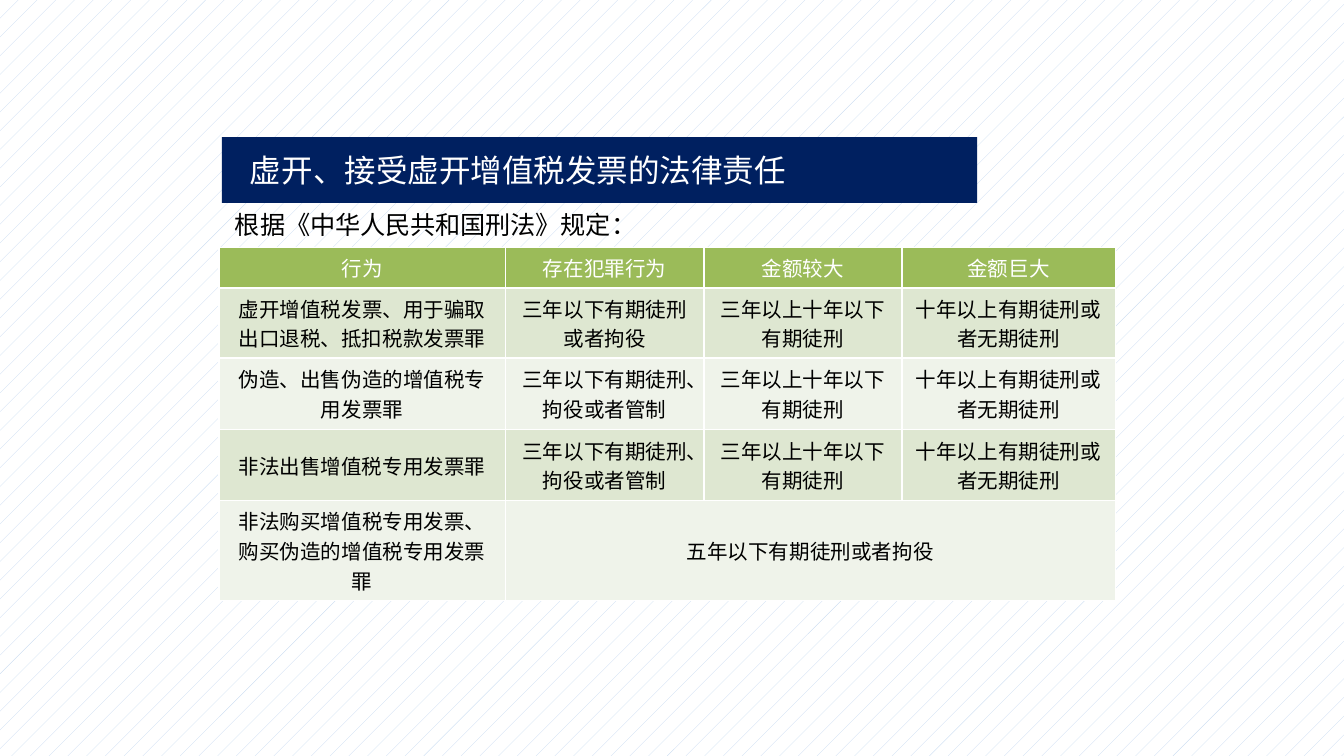
"""Build a slide on the legal liability for false VAT invoices."""
from lxml import etree
from pptx import Presentation
from pptx.dml.color import RGBColor
from pptx.enum.dml import MSO_PATTERN
from pptx.enum.shapes import MSO_SHAPE
from pptx.enum.text import MSO_ANCHOR, PP_ALIGN
from pptx.oxml.ns import qn
from pptx.util import Inches, Pt

WHITE = RGBColor(0xFF, 0xFF, 0xFF)
BLACK = RGBColor(0, 0, 0)
NAVY = RGBColor(0, 0x20, 0x60)
GREEN = RGBColor(0x9B, 0xBB, 0x59)
BANDS = RGBColor(0xEF, 0xF3, 0xEA), RGBColor(0xDE, 0xE7, 0xD1)
PALE = RGBColor(0xC6, 0xD9, 0xF1)
DOTS = MSO_PATTERN.PERCENT_5
RECT = MSO_SHAPE.RECTANGLE
MIDDLE = MSO_ANCHOR.MIDDLE
LEFT, CENTER = PP_ALIGN.LEFT, PP_ALIGN.CENTER

TITLE = "虚开、接受虚开增值税发票的法律责任"
LEAD = "根据《中华人民共和国刑法》规定："
MILD = "三年以下有期徒刑、拘役或者管制"
MORE = "三年以上十年以下有期徒刑"
MOST = "十年以上有期徒刑或者无期徒刑"
ROWS = [
    ("行为", "存在犯罪行为", "金额较大", "金额巨大"),
    ("虚开增值税发票、用于骗取出口退税、抵扣税款发票罪", "三年以下有期徒刑或者拘役", MORE, MOST),
    ("伪造、出售伪造的增值税专用发票罪", MILD, MORE, MOST),
    ("非法出售增值税专用发票罪", MILD, MORE, MOST),
    ("非法购买增值税专用发票、购买伪造的增值税专用发票罪", "五年以下有期徒刑或者拘役"),
]
WIDTHS = 2.13, 1.48, 1.47, 1.59
HEIGHTS = 0.3, 0.49, 0.53, 0.53, 0.42
WIDE = Inches(10)
EDGE, TOP, BAR, GAP = 1.65, 1.02, 0.49, 0.33


def write(frame, text, size, face, color, align=LEFT):
    frame.text = text
    para = frame.paragraphs[0]
    para.alignment = align
    para.font.size = Pt(size)
    para.font.name = face
    para.font.color.rgb = color


def border(cell):
    props = cell._tc.get_or_add_tcPr()
    for spot, side in enumerate("LRTB"):
        line = etree.Element(qn(f"a:ln{side}"), w=str(Pt(1)))
        fill = etree.SubElement(line, qn("a:solidFill"))
        etree.SubElement(fill, qn("a:srgbClr"), val=str(WHITE))
        props.insert(spot, line)


def add_title(slide):
    bar = slide.shapes.add_shape(RECT, Inches(EDGE), Inches(TOP), Inches(5.62), Inches(BAR))
    bar.shadow.inherit = False
    bar.fill.solid()
    bar.fill.fore_color.rgb = NAVY
    bar.line.fill.background()
    frame = bar.text_frame
    frame.vertical_anchor = MIDDLE
    frame.margin_left = Inches(0.21)
    write(frame, TITLE, 16.9, "Noto Sans CJK SC", WHITE)


def add_lead(slide):
    box = slide.shapes.add_textbox(Inches(EDGE), Inches(TOP + BAR), Inches(3.31), Inches(GAP))
    box.text_frame.word_wrap = True
    write(box.text_frame, LEAD, 13.5, "Calibri", BLACK)


def add_grid(slide):
    grid = slide.shapes.add_table(
        len(ROWS), len(WIDTHS), Inches(EDGE - 0.02), Inches(TOP + BAR + GAP),
        Inches(sum(WIDTHS)), Inches(2.49)).table
    for col, width in zip(grid.columns, WIDTHS):
        col.width = Inches(width)
    for row, height in zip(grid.rows, HEIGHTS):
        row.height = Inches(height)
    grid.cell(4, 1).merge(grid.cell(4, 3))
    for r, row in enumerate(ROWS):
        for c in range(len(WIDTHS)):
            cell = grid.cell(r, c)
            cell.vertical_anchor = MIDDLE
            cell.margin_left = cell.margin_right = Inches(0.07)
            cell.margin_top = cell.margin_bottom = Inches(0.04)
            cell.fill.solid()
            cell.fill.fore_color.rgb = BANDS[r % 2] if r else GREEN
            border(cell)
            if c < len(row):
                write(cell.text_frame, row[c], 11, "Arial", BLACK if r else WHITE, CENTER)


def main():
    deck = Presentation()
    deck.slide_width, deck.slide_height = WIDE, WIDE * 9 // 16
    slide = deck.slides.add_slide(deck.slide_layouts[6])
    back = slide.background.fill
    back.patterned()
    back.pattern = DOTS
    back.fore_color.rgb = PALE
    back.back_color.rgb = WHITE
    add_title(slide)
    add_grid(slide)
    add_lead(slide)
    deck.save("out.pptx")


if __name__ == "__main__":
    main()
